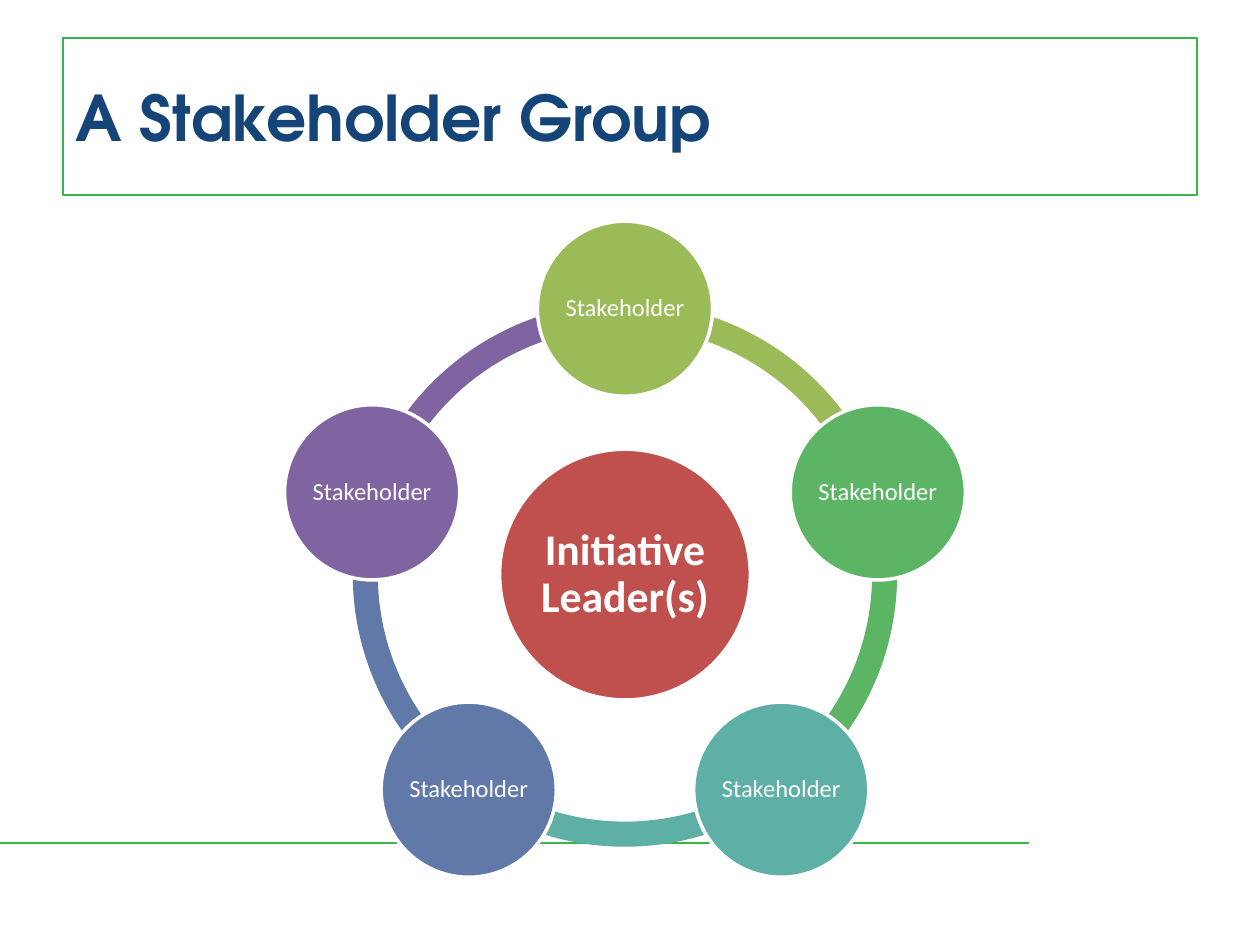
import math
from dataclasses import dataclass

from lxml import etree
from pptx import Presentation
from pptx.dml.color import RGBColor
from pptx.enum import shapes, text
from pptx.oxml import ns
from pptx.util import Inches, Pt

COLORS = {
    "rule": "39B54A",
    "title": "154578",
    "white": "FFFFFF",
    "red": "C0504D",
    "lime": "9BBB59",
    "green": "5CB565",
    "teal": "5EAFA6",
    "blue": "6179A8",
    "purple": "8064A2",
}
CENTER_X, CENTER_Y = 4.96, 4.56
ORBIT_RADIUS = 2.11
RING_SIZE = 4.32
RING_THICKNESS = 0.046
STAKEHOLDER_COLORS = ["lime", "green", "teal", "blue", "purple"]
STEP = 360 / len(STAKEHOLDER_COLORS)


@dataclass
class Circle:
    label: str
    color: str
    x: float
    y: float
    size: float
    font_size: int
    bold: bool = False


def rgb(name: str) -> RGBColor:
    return RGBColor.from_string(COLORS[name])


def node_angle(index: int) -> float:
    """Clockwise degrees from the right, with the first node on top."""
    return (270 + index * STEP) % 360


def add_centered(page, kind, x: float, y: float, size: float, color: str):
    shape = page.shapes.add_shape(
        kind, Inches(x - size / 2), Inches(y - size / 2), Inches(size), Inches(size))
    shape.shadow.inherit = False
    shape.fill.solid()
    shape.fill.fore_color.rgb = rgb(color)
    return shape


def write(shape, label: str, font: str, size: int, color: str, bold: bool, align) -> None:
    frame = shape.text_frame
    frame.word_wrap = True
    frame.vertical_anchor = text.MSO_ANCHOR.MIDDLE
    frame.text = label
    para = frame.paragraphs[0]
    para.alignment = align
    span = para.runs[0].font
    span.name, span.size, span.bold = font, Pt(size), bold
    span.color.rgb = rgb(color)


def add_arc(page, index: int) -> None:
    arc = add_centered(page, shapes.MSO_SHAPE.BLOCK_ARC, CENTER_X, CENTER_Y,
                       RING_SIZE, STAKEHOLDER_COLORS[index])
    arc.line.fill.background()
    # Angles are stored in 60000ths of a degree, adjustments in 100000ths
    arc.adjustments[0] = node_angle(index) * 0.6
    arc.adjustments[1] = node_angle(index + 1) * 0.6
    arc.adjustments[2] = RING_THICKNESS


def add_circle(page, circle: Circle) -> None:
    shape = add_centered(page, shapes.MSO_SHAPE.OVAL, circle.x, circle.y,
                         circle.size, circle.color)
    shape.line.color.rgb = rgb("white")
    shape.line.width = Pt(2)
    frame = shape.text_frame
    frame.margin_left = frame.margin_right = 0
    frame.margin_top = frame.margin_bottom = 0
    write(shape, circle.label, "Calibri", circle.font_size, "white", circle.bold,
          text.PP_ALIGN.CENTER)
    frame.paragraphs[0].line_spacing = 0.9


def main() -> None:
    deck = Presentation()
    deck.slide_width, deck.slide_height = Inches(10), Inches(7.5)
    page = deck.slides.add_slide(deck.slide_layouts[6])

    # Footer rule
    rule = page.shapes.add_connector(
        shapes.MSO_CONNECTOR.STRAIGHT, 0, Inches(6.69), Inches(8.17), Inches(6.69))
    rule.line.color.rgb = rgb("rule")
    rule.line.width = Pt(1.5)
    etree.SubElement(rule._element.spPr, ns.qn("a:effectLst"))

    # Framed title
    title = page.shapes.add_textbox(Inches(0.5), Inches(0.3), Inches(9), Inches(1.25))
    title.line.color.rgb = rgb("rule")
    title.line.width = Pt(1)
    write(title, "A Stakeholder Group", "TeX Gyre Adventor", 36, "title", True,
          text.PP_ALIGN.LEFT)

    # Ring segments, each running clockwise from its stakeholder
    for index in reversed(range(len(STAKEHOLDER_COLORS))):
        add_arc(page, index)

    # Leader in the middle, stakeholders around
    add_circle(page, Circle("Initiative Leader(s)", "red", CENTER_X, CENTER_Y, 1.99, 25, True))
    for index, color in enumerate(STAKEHOLDER_COLORS):
        angle = math.radians(node_angle(index))
        add_circle(page, Circle(
            "Stakeholder", color,
            CENTER_X + ORBIT_RADIUS * math.cos(angle),
            CENTER_Y + ORBIT_RADIUS * math.sin(angle), 1.39, 14))

    deck.save("out.pptx")


if __name__ == "__main__":
    main()
